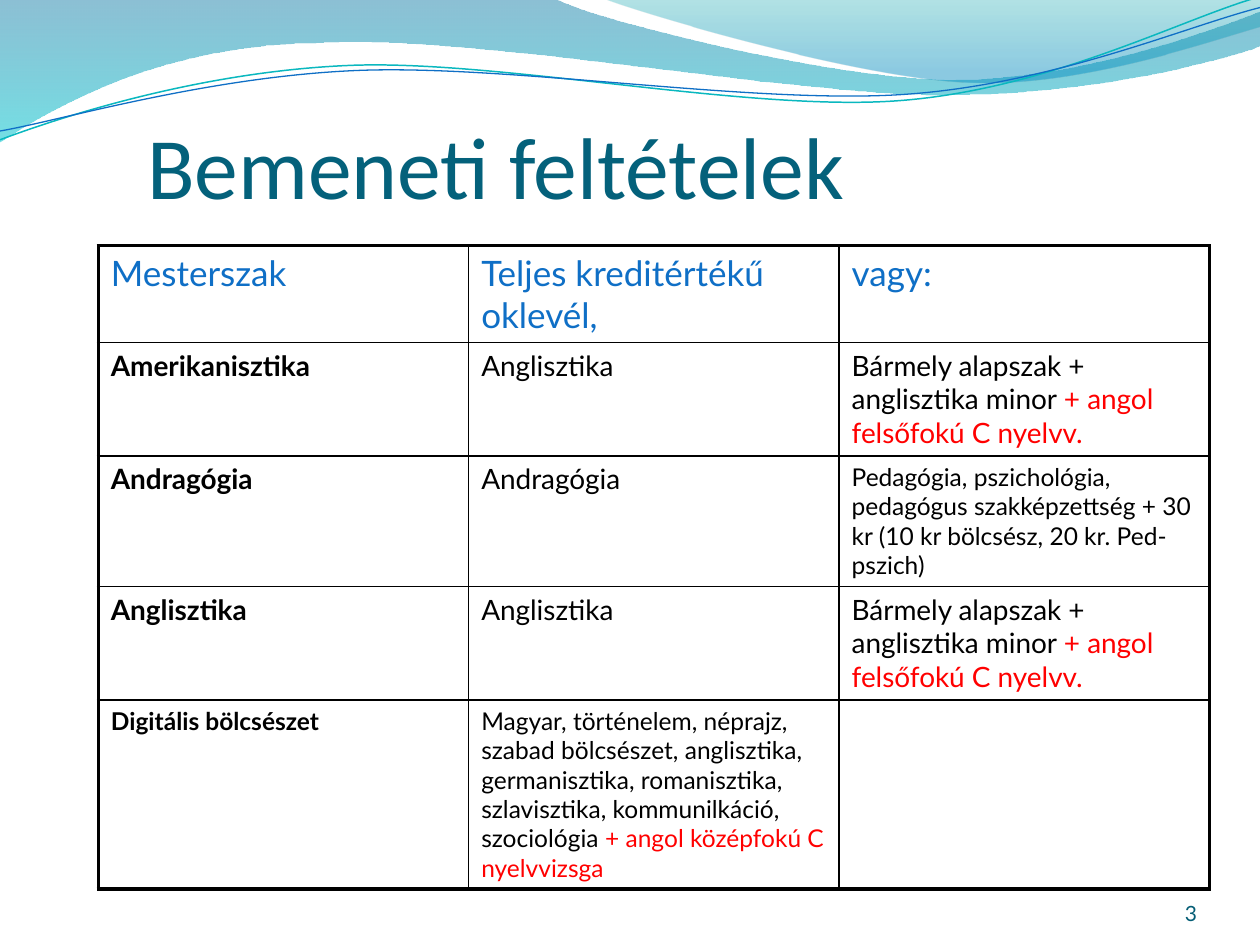
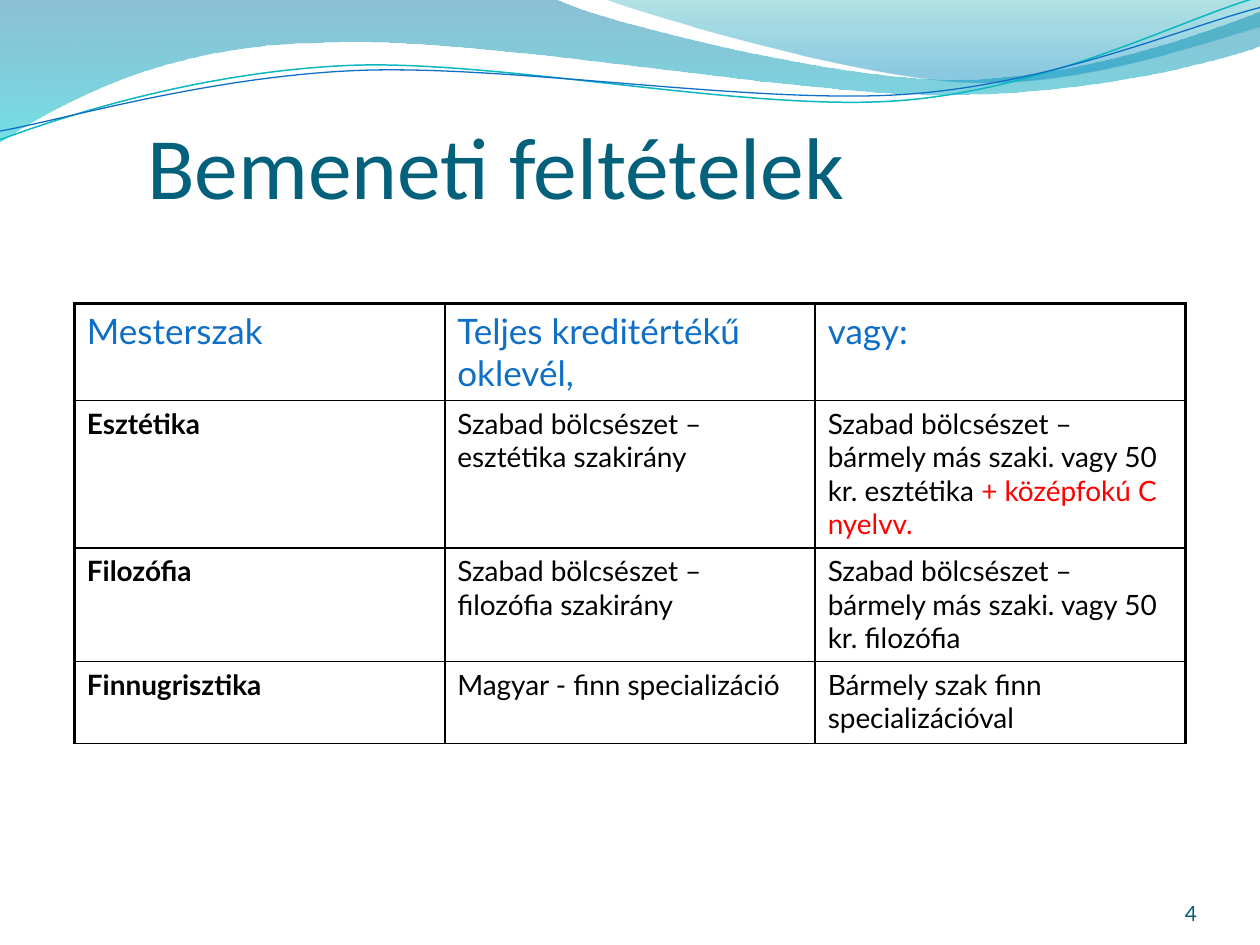
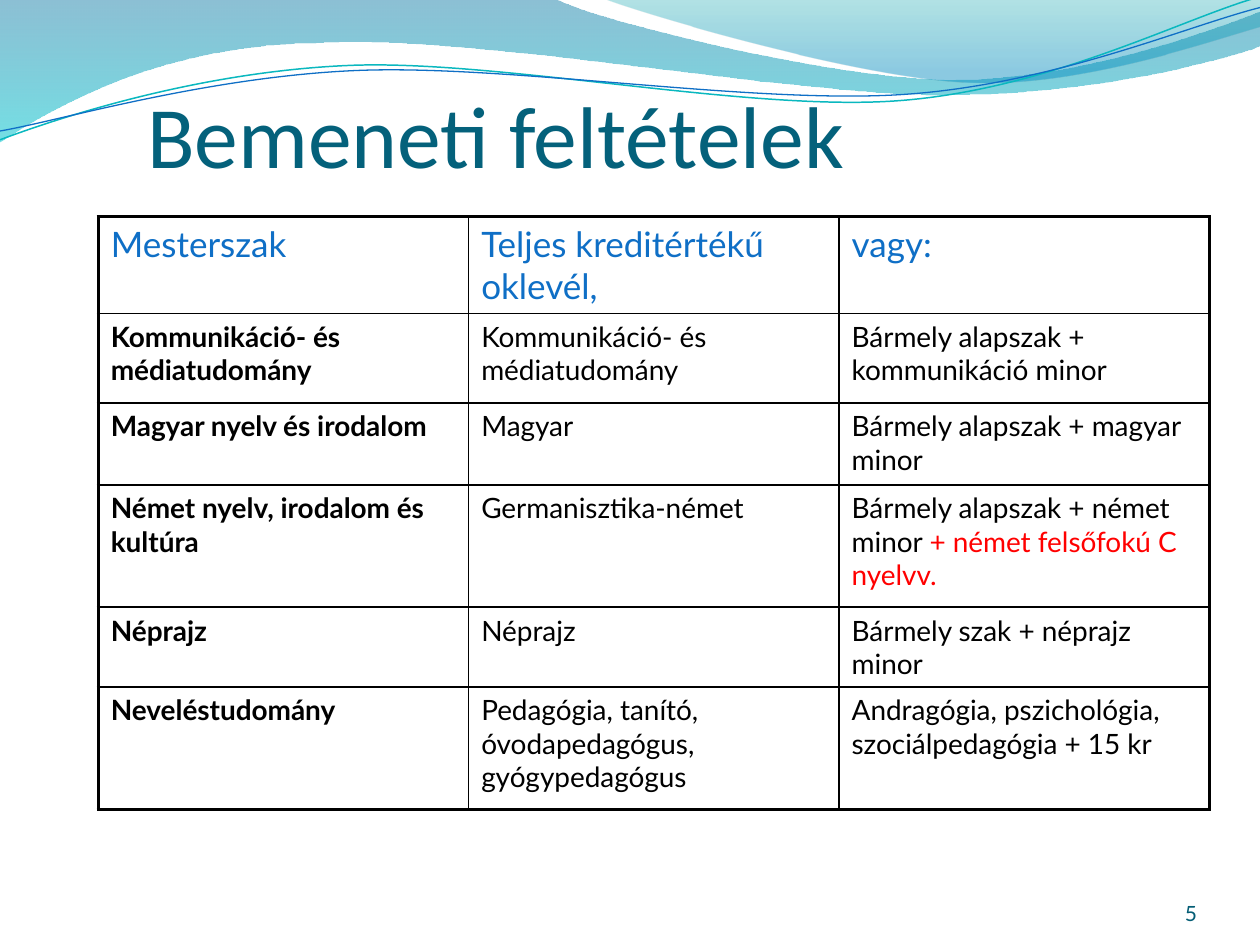
from collections import namedtuple

from lxml.etree import SubElement
from pptx import Presentation
from pptx.dml.color import RGBColor
from pptx.enum.text import MSO_ANCHOR as Anchor, PP_ALIGN as Align
from pptx.oxml.ns import qn
from pptx.util import Inches, Pt

BODY_FONT, TITLE_FONT = "Lato", "Calibri"
BLACK, RED, BLUE = "000000", "FF0000", "0F6FC6"
TEAL, TITLE_COLOR, NUMBER_COLOR = "0AB8BF", "04617B", "045D75"
THIN, THICK = 1, 2.25

Box = namedtuple("Box", "left top width height")
Entry = namedtuple("Entry", "text extra size", defaults=("", 16))
Table = namedtuple("Table", "box heights rows closed")

COLUMN_WIDTH = 2.94
HEADER = [Entry(text, size=20) for text in
          ("Mesterszak", "Teljes kreditértékű oklevél,", "vagy:")]
ENGLISH_MINOR = Entry("Bármely alapszak + anglisztika minor ", "+ angol felsőfokú C nyelvv.")

WIDE_BAND = ((0, -0.01), [
    [(4.4, -0.01)],
    [(4.76, 0.17), (6.64, 0.63), (7.58, 0.63)],
    [(8.53, 0.63), (9.58, 0.26), (10, 0.09)],
    [(10.01, 0.36)],
    [(9.83, 0.44), (8.7, 0.76), (7.46, 0.75)],
    [(6.22, 0.75), (3.82, 0.28), (2.57, 0.34)],
    [(1.29, 0.35), (0.46, 0.83), (-0.01, 1.13)],
    [(0, -0.01)],
])
RIGHT_BAND = ((4.79, -0.01), [
    [(5.09, 0.11), (6.82, 0.62), (7.69, 0.65)],
    [(8.56, 0.69), (9.61, 0.32), (10, 0.21)],
    [(10, 0)],
    [(4.79, -0.01)],
])
TEAL_WAVE = ((0, 1.11), [
    [(0.48, 0.93), (1.58, 0.57), (2.77, 0.52)],
    [(3.95, 0.47), (5.93, 0.89), (7.13, 0.8)],
    [(8.33, 0.71), (9.38, 0.15), (9.98, -0.02)],
])
BLUE_WAVE = ((0, 1.04), [
    [(0.47, 0.96), (1.64, 0.61), (2.83, 0.56)],
    [(4.03, 0.51), (5.97, 0.83), (7.17, 0.75)],
    [(8.36, 0.67), (9.41, 0.21), (10, 0.06)],
])

SLIDES = [
    (3, Box(1.17, 0.33, 8.25, 1.39), Table(
        Box(0.78, 1.95, 8.82, 5.1), [0.77, 0.9, 1.03, 0.9, 1.5], [
            [Entry("Amerikanisztika"), Entry("Anglisztika"), ENGLISH_MINOR],
            [Entry("Andragógia"), Entry("Andragógia"),
             Entry("Pedagógia, pszichológia, pedagógus szakképzettség + 30 kr "
                   "(10 kr bölcsész, 20 kr. Ped-pszich)", size=14)],
            [Entry("Anglisztika"), Entry("Anglisztika"), ENGLISH_MINOR],
            [Entry("Digitális bölcsészet", size=14),
             Entry("Magyar, történelem, néprajz, szabad bölcsészet, anglisztika, "
                   "germanisztika, romanisztika, szlavisztika, kommunilkáció, szociológia ",
                   "+ angol középfokú C nyelvvizsga", 14), Entry("")],
        ], True)),
    (4, Box(1.17, 0.33, 8.25, 1.39), Table(
        Box(0.59, 2.41, 8.82, 3.49), [0.77, 1.17, 0.9, 0.65], [
            [Entry("Esztétika"), Entry("Szabad bölcsészet – esztétika szakirány"),
             Entry("Szabad bölcsészet – bármely más szaki. vagy 50 kr. esztétika ",
                   "+ középfokú C nyelvv.")],
            [Entry("Filozófia"), Entry("Szabad bölcsészet – filozófia szakirány"),
             Entry("Szabad bölcsészet – bármely más szaki. vagy 50 kr. filozófia")],
            [Entry("Finnugrisztika"), Entry("Magyar - finn specializáció"),
             Entry("Bármely szak finn specializációval")],
        ], False)),
    (5, Box(1.17, 0.33, 8.25, 1.15), Table(
        Box(0.78, 1.72, 8.82, 4.7), [0.77, 0.71, 0.65, 0.97, 0.63, 0.97], [
            [Entry("Kommunikáció- és médiatudomány"), Entry("Kommunikáció- és médiatudomány"),
             Entry("Bármely alapszak + kommunikáció minor")],
            [Entry("Magyar nyelv és irodalom"), Entry("Magyar"),
             Entry("Bármely alapszak + magyar minor")],
            [Entry("Német nyelv, irodalom és kultúra"), Entry("Germanisztika-német"),
             Entry("Bármely alapszak + német minor ", "+ német felsőfokú C nyelvv.")],
            [Entry("Néprajz"), Entry("Néprajz"), Entry("Bármely szak + néprajz minor")],
            [Entry("Neveléstudomány"), Entry("Pedagógia, tanító, óvodapedagógus, gyógypedagógus"),
             Entry("Andragógia, pszichológia, szociálpedagógia + 15 kr")],
        ], True)),
]


def color(value):
    """Turn a hex string into a colour."""
    return RGBColor.from_string(value)


def style(span, size, value, name=BODY_FONT, bold=False):
    """Set the font of a run."""
    span.font.size, span.font.name, span.font.bold = Pt(size), name, bold
    span.font.color.rgb = color(value)


def bend(shape, segments):
    """Merge the lines of each three-point segment into one cubic curve."""
    lines = iter(list(shape.element.iter(qn("a:lnTo"))))
    for segment in segments:
        first, *others = [next(lines) for _ in segment]
        if others:
            first.tag = qn("a:cubicBezTo")
            for line in others:
                first.append(line[0])
                line.getparent().remove(line)


def add_outline(page, outline, close):
    """Draw a freeform of straight and curved segments."""
    start, segments = outline
    builder = page.shapes.build_freeform(*map(Inches, start))
    points = [tuple(map(Inches, point)) for segment in segments for point in segment]
    builder.add_line_segments(points, close=close)
    shape = builder.convert_to_shape()
    bend(shape, segments)
    shape.shadow.inherit = False
    return shape


def add_band(page, outline, stops):
    """Draw a translucent band that fades from top to bottom."""
    band = add_outline(page, outline, True)
    band.line.fill.background()
    band.fill.gradient()
    band.fill.gradient_angle = 270
    for stop, (position, value, _) in zip(band.fill.gradient_stops, stops):
        stop.position, stop.color.rgb = position, color(value)
    for tint, (_, _, opacity) in zip(band.element.iter(qn("a:srgbClr")), stops):
        SubElement(tint, qn("a:alpha"), val=str(opacity * 1000))


def add_wave(page, outline, value, width):
    """Draw a thin curved line."""
    wave = add_outline(page, outline, False)
    wave.fill.background()
    wave.line.color.rgb, wave.line.width = color(value), Pt(width)


def add_backdrop(page):
    """Draw the bands and waves at the top of a slide."""
    add_band(page, WIDE_BAND, [(0, "0074A1", 45), (1, "00C6CF", 55)])
    add_band(page, RIGHT_BAND, [(0, "00A1A9", 30), (0.8, "008BBF", 45)])
    add_wave(page, TEAL_WAVE, TEAL, 0.85)
    add_wave(page, BLUE_WAVE, BLUE, 0.75)


def add_label(page, box, text, size, value, name, align=Align.LEFT, top_inset=0):
    """Place one line of text at the bottom of a box."""
    frame = page.shapes.add_textbox(*map(Inches, box)).text_frame
    frame.word_wrap, frame.vertical_anchor = True, Anchor.BOTTOM
    frame.margin_left = frame.margin_right = frame.margin_bottom = 0
    frame.margin_top = Inches(top_inset)
    frame.text = text
    para = frame.paragraphs[0]
    para.alignment = align
    style(para.runs[0], size, value, name)


def set_borders(cell, widths):
    """Give the sides of a cell black lines of the given widths."""
    properties = cell._tc.get_or_add_tcPr()
    for side, width in widths.items():
        line = SubElement(properties, qn(f"a:ln{side}"), w=str(Pt(width)))
        SubElement(SubElement(line, qn("a:solidFill")), qn("a:srgbClr"), val=BLACK)


def fill_cell(cell, entry, value, bold):
    """Write an entry into a cell, with its extra condition in red."""
    if not entry.text:
        return
    para = cell.text_frame.paragraphs[0]
    para.text = entry.text
    style(para.runs[0], entry.size, value, bold=bold)
    if entry.extra:
        span = para.add_run()
        span.text = entry.extra
        style(span, entry.size, RED)


def add_requirements(page, table):
    """Build the table of entry requirements."""
    rows = [HEADER, *table.rows]
    grid = page.shapes.add_table(len(rows), len(HEADER), *map(Inches, table.box)).table
    grid.first_row = grid.horz_banding = False
    for column in grid.columns:
        column.width = Inches(COLUMN_WIDTH)
    for r, (entries, height) in enumerate(zip(rows, table.heights)):
        grid.rows[r].height = Inches(height)
        for c, entry in enumerate(entries):
            cell = grid.cell(r, c)
            edges = {"L": c == 0, "R": c == len(HEADER) - 1, "T": r == 0,
                     "B": table.closed and r == len(rows) - 1}
            set_borders(cell, {side: THICK if outer else THIN for side, outer in edges.items()})
            cell.fill.background()
            fill_cell(cell, entry, BLACK if r else BLUE, r > 0 and c == 0)


def add_page(deck, number, title_box, table):
    """Add one slide with its title, table and number."""
    page = deck.slides.add_slide(deck.slide_layouts[6])
    add_backdrop(page)
    add_label(page, title_box, "Bemeneti feltételek", 50, TITLE_COLOR, TITLE_FONT, top_inset=0.05)
    add_requirements(page, table)
    add_label(page, Box(8.67, 6.95, 0.83, 0.4), str(number), 12, NUMBER_COLOR, BODY_FONT,
              Align.RIGHT)


def main():
    """Build and save the deck."""
    deck = Presentation()
    deck.slide_width, deck.slide_height = Inches(10), Inches(7.5)
    for number, title_box, table in SLIDES:
        add_page(deck, number, title_box, table)
    deck.save("out.pptx")


if __name__ == "__main__":
    main()
